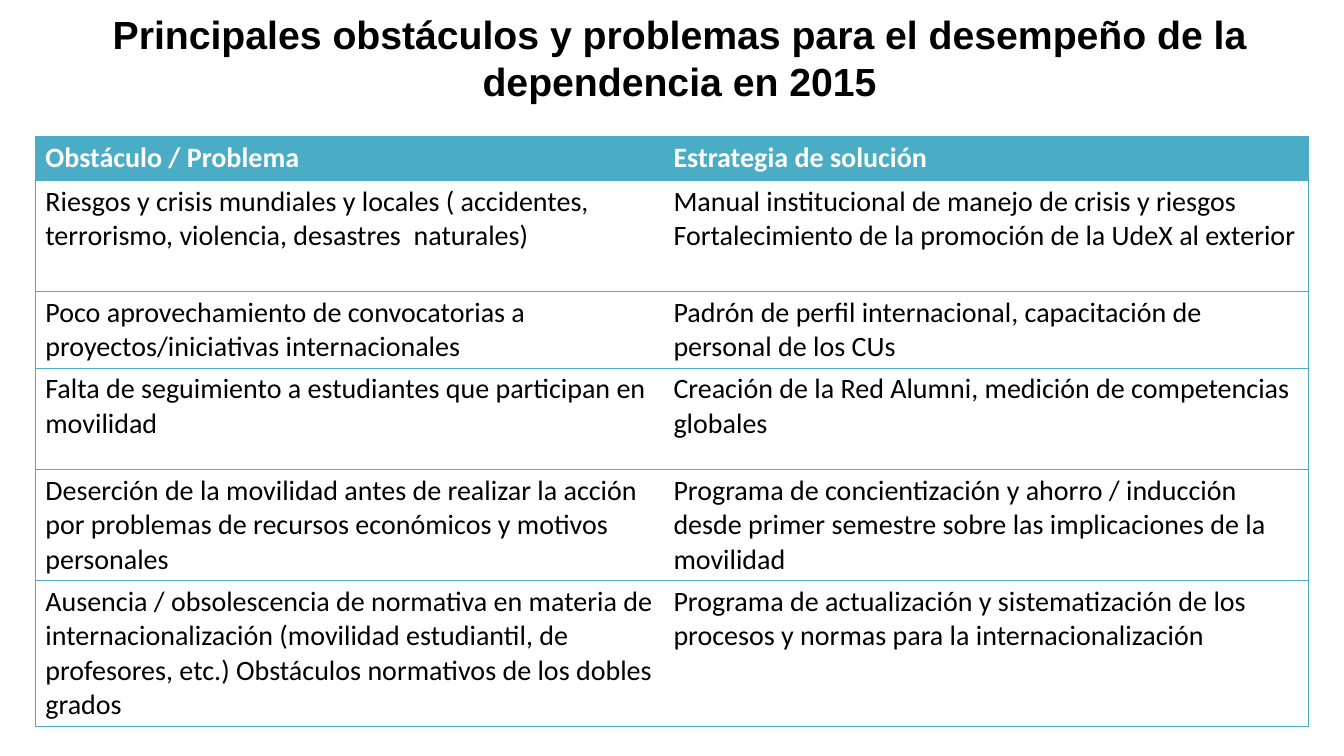
from lxml import etree
from pptx import Presentation
from pptx.dml.color import RGBColor
from pptx.enum.text import MSO_AUTO_SIZE, PP_ALIGN
from pptx.oxml.ns import qn
from pptx.util import Inches, Pt

CENTER = PP_ALIGN.CENTER
FIT_SHAPE = MSO_AUTO_SIZE.SHAPE_TO_FIT_TEXT

BLACK = RGBColor(0x00, 0x00, 0x00)
WHITE = RGBColor(0xFF, 0xFF, 0xFF)
TEAL = RGBColor(0x4B, 0xAC, 0xC6)

TITLE = "Principales obstáculos y problemas para el desempeño de la dependencia en 2015"
COLUMN_WIDTHS = (6.23, 6.4)
ROW_HEIGHTS = (0.44, 1.1, 0.76, 1.01, 1.1, 1.43)
ROWS = (
    ("Obstáculo / Problema", "Estrategia de solución"),
    ("Riesgos y crisis mundiales y locales ( accidentes, terrorismo, violencia, "
     "desastres  naturales)",
     "Manual institucional de manejo de crisis y riesgos\n"
     "Fortalecimiento de la promoción de la UdeX al exterior"),
    ("Poco aprovechamiento de convocatorias a proyectos/iniciativas internacionales",
     "Padrón de perfil internacional, capacitación de personal de los CUs"),
    ("Falta de seguimiento a estudiantes que participan en movilidad",
     "Creación de la Red Alumni, medición de competencias globales"),
    ("Deserción de la movilidad antes de realizar la acción por problemas de "
     "recursos económicos y motivos personales",
     "Programa de concientización y ahorro / inducción desde primer semestre sobre "
     "las implicaciones de la movilidad"),
    ("Ausencia / obsolescencia de normativa en materia de internacionalización "
     "(movilidad estudiantil, de profesores, etc.) Obstáculos normativos de los "
     "dobles grados",
     "Programa de actualización y sistematización de los procesos y normas para la "
     "internacionalización"),
)


def format_text(frame, font_name, size, color, bold):
    for para in frame.paragraphs:
        for span in para.runs:
            span.font.name = font_name
            span.font.size = Pt(size)
            span.font.color.rgb = color
            span.font.bold = bold


def set_borders(cell, visible_sides):
    """Draw thin teal lines on the visible sides (L, R, T, B) and none on the others."""
    properties = cell._tc.get_or_add_tcPr()
    for side in "LRTB":
        line = etree.SubElement(properties, qn(f"a:ln{side}"), w=str(Pt(0.5)))
        if side in visible_sides:
            fill = etree.SubElement(line, qn("a:solidFill"))
            etree.SubElement(fill, qn("a:srgbClr"), val=str(TEAL))
        else:
            etree.SubElement(line, qn("a:noFill"))


def fill_cell(cell, text, is_header, outer_side):
    set_borders(cell, "TB" + outer_side)
    cell.margin_top = cell.margin_bottom = Inches(0.05 if is_header else 0.04)
    cell.fill.solid()
    cell.fill.fore_color.rgb = TEAL if is_header else WHITE
    cell.text_frame.text = text
    format_text(cell.text_frame, "Calibri", 20, WHITE if is_header else BLACK, is_header)


def add_strategy_table(page):
    frame = page.shapes.add_table(
        len(ROWS), len(COLUMN_WIDTHS), Inches(0.35), Inches(1.35),
        Inches(sum(COLUMN_WIDTHS)), Inches(sum(ROW_HEIGHTS)))
    table = frame.table
    table.horz_banding = False
    for column, width in zip(table.columns, COLUMN_WIDTHS):
        column.width = Inches(width)
    for row_index, (texts, height) in enumerate(zip(ROWS, ROW_HEIGHTS)):
        table.rows[row_index].height = Inches(height)
        for column_index, text in enumerate(texts):
            fill_cell(table.cell(row_index, column_index), text,
                      row_index == 0, "LR"[column_index])


def add_title(page):
    box = page.shapes.add_textbox(Inches(0.53), Inches(0.05), Inches(12.42), Inches(1.04))
    frame = box.text_frame
    frame.word_wrap = True
    frame.auto_size = FIT_SHAPE
    frame.text = TITLE
    frame.paragraphs[0].alignment = CENTER
    format_text(frame, "Arial", 28, BLACK, True)


def main():
    deck = Presentation()
    deck.slide_width = Inches(13.33)
    deck.slide_height = Inches(7.5)
    page = deck.slides.add_slide(deck.slide_layouts[6])
    add_strategy_table(page)
    add_title(page)
    deck.save("out.pptx")


if __name__ == "__main__":
    main()
